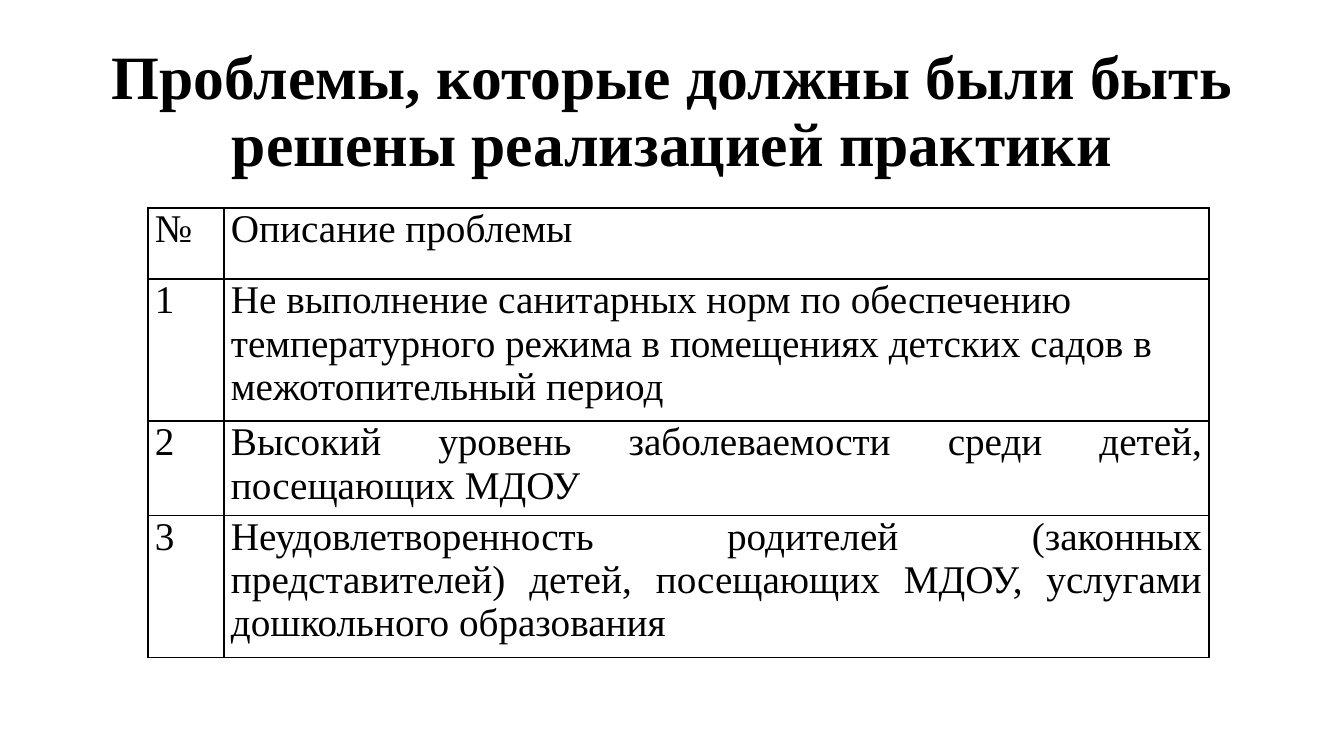
from lxml.etree import SubElement
from pptx import Presentation
from pptx.dml.color import RGBColor
from pptx.enum.text import MSO_ANCHOR as Anchor, PP_ALIGN as Align
from pptx.oxml.ns import qn
from pptx.util import Pt

HEADING = "Проблемы, которые должны были быть решены реализацией практики"
PROBLEMS = [
    ("№", "Описание проблемы", Align.JUSTIFY),
    ("1", "Не выполнение санитарных норм по обеспечению температурного режима "
          "в помещениях детских садов в межотопительный период", Align.LEFT),
    ("2", "Высокий уровень заболеваемости среди детей, посещающих МДОУ", Align.JUSTIFY),
    ("3", "Неудовлетворенность родителей (законных представителей) детей, "
          "посещающих МДОУ, услугами дошкольного образования", Align.JUSTIFY),
]
COLUMN_WIDTHS = [76, 985]
ROW_HEIGHTS = [71, 142, 87, 142]
BLACK = RGBColor(0, 0, 0)
WHITE = RGBColor(255, 255, 255)
FONT = "Times New Roman"


def px(length):
    return round(length * 914400 / 100.8)


def style(paragraph, size, align, bold=False):
    paragraph.alignment = align
    font = paragraph.font
    font.name, font.size, font.bold = FONT, Pt(size), bold
    font.color.rgb = BLACK


def add_borders(cell):
    properties = cell._tc.get_or_add_tcPr()
    for side in ("lnL", "lnR", "lnT", "lnB"):
        border = SubElement(properties, qn(f"a:{side}"), w=str(Pt(1)))
        SubElement(SubElement(border, qn("a:solidFill")), qn("a:srgbClr"), val=str(BLACK))


def fill_cell(cell, text, align):
    cell.text = text
    cell.margin_left = cell.margin_right = px(7)
    cell.margin_top = cell.margin_bottom = 0
    style(cell.text_frame.paragraphs[0], 28, align)
    add_borders(cell)
    cell.fill.solid()
    cell.fill.fore_color.rgb = WHITE


def main():
    deck = Presentation()
    deck.slide_width, deck.slide_height = px(1344), px(756)
    slide = deck.slides.add_slide(deck.slide_layouts[6])

    heading = slide.shapes.add_textbox(px(93), px(40), px(1159), px(146)).text_frame
    heading.word_wrap = True
    heading.vertical_anchor = Anchor.MIDDLE
    heading.text = HEADING
    heading.paragraphs[0].line_spacing = 0.9
    style(heading.paragraphs[0], 44, Align.CENTER, bold=True)

    table = slide.shapes.add_table(
        len(PROBLEMS), len(COLUMN_WIDTHS), px(148), px(208),
        px(sum(COLUMN_WIDTHS)), px(sum(ROW_HEIGHTS))).table
    table.first_row = table.horz_banding = False
    for column, width in zip(table.columns, COLUMN_WIDTHS):
        column.width = px(width)
    for row, height, (number, problem, align) in zip(table.rows, ROW_HEIGHTS, PROBLEMS):
        row.height = px(height)
        fill_cell(row.cells[0], number, Align.JUSTIFY)
        fill_cell(row.cells[1], problem, align)

    deck.save("out.pptx")


if __name__ == "__main__":
    main()
